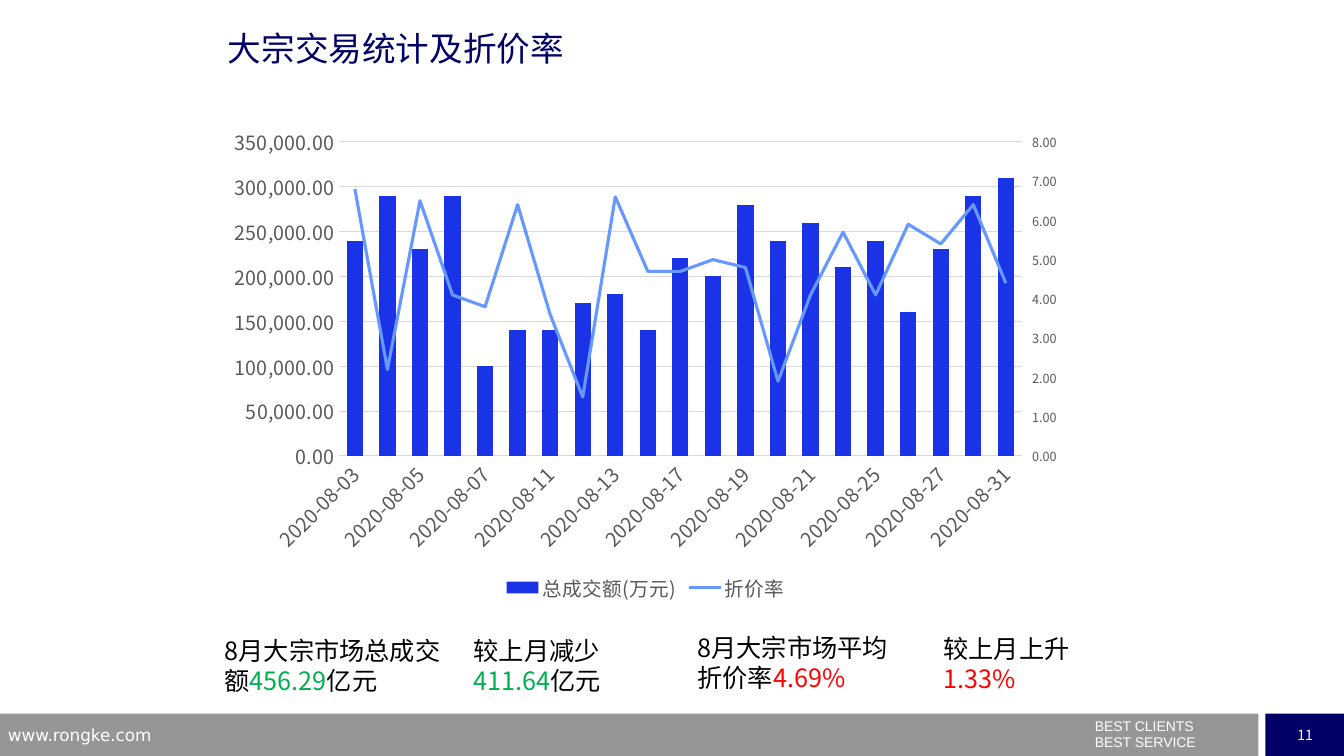
from dataclasses import dataclass

from pptx import Presentation
from pptx import util as u
from pptx.chart.axis import ValueAxis
from pptx.chart.data import CategoryChartData
from pptx.dml.color import RGBColor
from pptx.enum import chart as ch, shapes, text
from pptx.oxml import parse_xml
from pptx.oxml.ns import nsdecls, qn

CJK = "Noto Sans CJK SC"
NAVY, GREY, WHITE, BLACK = "000066", "969696", "FFFFFF", "000000"
GREEN, RED = "00B050", "FF0000"
BAR_BLUE, LINE_BLUE = "1B33E7", "6699FF"
AXIS_GREY, GRID_GREY = "595959", "D9D9D9"

DAYS = [3, 4, 5, 6, 7, 10, 11, 12, 13, 14, 17, 18, 19, 20, 21, 24, 25, 26, 27, 28, 31]
TURNOVER = [240000, 290000, 230000, 290000, 100000, 140000, 140000, 170000, 180000,
            140000, 220000, 200000, 280000, 240000, 260000, 210000, 240000, 160000,
            230000, 290000, 310000]
DISCOUNT = [6.8, 2.2, 6.5, 4.1, 3.8, 6.4, 3.6, 1.5, 6.6, 4.7, 4.7, 5, 4.8, 1.9, 4.1,
            5.7, 4.1, 5.9, 5.4, 6.4, 4.4]


@dataclass
class Box:
    left: float
    top: float
    width: float
    height: float

    def emu(self) -> list:
        return [u.Inches(v) for v in (self.left, self.top, self.width, self.height)]


@dataclass
class Stat:
    box: Box
    paragraphs: list


STATS = [
    Stat(Box(2.13, 6.25, 2.38, 0.71),
         [[("8月大宗市场总成交额", BLACK), ("456.29", GREEN), ("亿元", BLACK)]]),
    Stat(Box(4.6, 6.25, 1.92, 0.71),
         [[("较上月减少", BLACK)], [("411.64", GREEN), ("亿元", BLACK)]]),
    Stat(Box(6.82, 6.22, 2.17, 0.71),
         [[("8月大宗市场平均折价率", BLACK), ("4.69%", RED)]]),
    Stat(Box(9.26, 6.23, 1.65, 0.71),
         [[("较上月上升", BLACK), ("1.33%", RED)]]),
]


def rgb(color: str) -> RGBColor:
    return RGBColor.from_string(color)


def set_font(font, size: float, color: str, name: str = CJK) -> None:
    font.size = u.Pt(size)
    font.name = name
    font.color.rgb = rgb(color)
    font._element.append(parse_xml(f'<a:ea {nsdecls("a")} typeface="{name}"/>'))


def write(tf, paragraphs: list, size: float, name: str = CJK, wrap: bool = True,
          align=text.PP_ALIGN.LEFT, anchor=text.MSO_ANCHOR.TOP,
          auto_size=text.MSO_AUTO_SIZE.NONE, line_spacing: float | None = None,
          space_before: float = 0) -> None:
    tf.word_wrap = wrap
    tf.auto_size = auto_size
    tf.vertical_anchor = anchor
    for i, runs in enumerate(paragraphs):
        p = tf.add_paragraph() if i else tf.paragraphs[0]
        p.alignment = align
        if line_spacing:
            p.line_spacing = line_spacing
        if i and space_before:
            p.space_before = u.Pt(space_before)
        for content, color in runs:
            r = p.add_run()
            r.text = content
            set_font(r.font, size, color, name)


def add_bar(s, box: Box, color: str):
    sp = s.shapes.add_shape(shapes.MSO_SHAPE.RECTANGLE, *box.emu())
    sp.shadow.inherit = False
    sp.fill.solid()
    sp.fill.fore_color.rgb = rgb(color)
    sp.line.fill.background()
    return sp


def add_text(s, box: Box, paragraphs: list, size: float, **fmt) -> None:
    write(s.shapes.add_textbox(*box.emu()).text_frame, paragraphs, size, **fmt)


def style_axis(axis, size: float, tick=ch.XL_TICK_MARK.NONE) -> None:
    axis.major_tick_mark = tick
    axis.minor_tick_mark = ch.XL_TICK_MARK.NONE
    set_font(axis.tick_labels.font, size, AXIS_GREY)


def scale_axis(axis, top: float, step: float) -> None:
    axis.minimum_scale, axis.maximum_scale, axis.major_unit = 0, top, step
    axis.format.line.fill.background()
    axis.tick_labels.number_format = "#,##0.00"
    axis.tick_labels.number_format_is_linked = False


def move_to_right_axis(chart) -> ValueAxis:
    bars = chart._chartSpace.find(".//" + qn("c:barChart"))
    ser = bars.findall(qn("c:ser"))[1]
    for flag in ser.findall(qn("c:invertIfNegative")):
        ser.remove(flag)
    lines = parse_xml(
        f'<c:lineChart {nsdecls("c")}><c:grouping val="standard"/><c:varyColors val="0"/>'
        '<c:marker val="1"/><c:axId val="5001"/><c:axId val="5002"/></c:lineChart>')
    lines.insert(2, ser)
    bars.addnext(lines)
    cat_ax = parse_xml(
        f'<c:catAx {nsdecls("c")}><c:axId val="5001"/>'
        '<c:scaling><c:orientation val="minMax"/></c:scaling><c:delete val="1"/>'
        '<c:axPos val="b"/><c:crossAx val="5002"/><c:crosses val="autoZero"/></c:catAx>')
    val_ax = parse_xml(
        f'<c:valAx {nsdecls("c")}><c:axId val="5002"/>'
        '<c:scaling><c:orientation val="minMax"/></c:scaling><c:delete val="0"/>'
        '<c:axPos val="r"/><c:tickLblPos val="nextTo"/>'
        '<c:crossAx val="5001"/><c:crosses val="max"/></c:valAx>')
    chart.value_axis._element.addnext(cat_ax)
    cat_ax.addnext(val_ax)
    return ValueAxis(val_ax)


def add_turnover_chart(s, box: Box) -> None:
    data = CategoryChartData()
    data.categories = [f"2020-08-{day:02d}" for day in DAYS]
    data.add_series("总成交额(万元)", TURNOVER, "#,##0.00")
    data.add_series("折价率", DISCOUNT, "0.00")
    chart = s.shapes.add_chart(ch.XL_CHART_TYPE.COLUMN_CLUSTERED, *box.emu(), data).chart
    set_font(chart.font, 10, BLACK)
    chart.has_title = False
    chart.has_legend = True
    chart.legend.position = ch.XL_LEGEND_POSITION.BOTTOM
    chart.legend.include_in_layout = False
    set_font(chart.legend.font, 14, AXIS_GREY)

    days, amounts = chart.category_axis, chart.value_axis
    style_axis(days, 14)
    days.format.line.color.rgb = rgb(GRID_GREY)
    days.format.line.width = u.Pt(0.75)
    days._element.find(qn("c:txPr")).find(qn("a:bodyPr")).set("rot", "-2700000")
    style_axis(amounts, 14)
    scale_axis(amounts, 350000, 50000)
    grid = amounts.major_gridlines.format.line
    grid.color.rgb = rgb(GRID_GREY)
    grid.width = u.Pt(0.75)

    rates = move_to_right_axis(chart)
    style_axis(rates, 9, ch.XL_TICK_MARK.OUTSIDE)
    scale_axis(rates, 8, 1)

    bars, lines = chart.plots
    bars.vary_by_categories = False
    bars.gap_width, bars.overlap = 100, -27
    turnover = bars.series[0]
    turnover.invert_if_negative = False
    turnover.format.fill.solid()
    turnover.format.fill.fore_color.rgb = rgb(BAR_BLUE)
    discount = lines.series[0]
    discount.smooth = False
    discount.marker.style = ch.XL_MARKER_STYLE.NONE
    discount.format.line.color.rgb = rgb(LINE_BLUE)
    discount.format.line.width = u.Pt(2.25)


def main() -> None:
    prs = Presentation()
    prs.slide_width, prs.slide_height = u.Inches(13.33), u.Inches(7.5)
    s = prs.slides.add_slide(prs.slide_layouts[5])

    add_bar(s, Box(0, 7.08, 12.48, 0.42), GREY)
    page = add_bar(s, Box(12.55, 7.08, 0.79, 0.42), NAVY)
    write(page.text_frame, [[("11", WHITE)]], 10, wrap=False,
          align=text.PP_ALIGN.CENTER, anchor=text.MSO_ANCHOR.MIDDLE)
    add_text(s, Box(10.76, 7.14, 2.56, 0.36),
             [[("BEST CLIENTS", WHITE)], [("BEST SERVICE", WHITE)]], 10,
             name="Arial", line_spacing=0.5, space_before=5.75)
    add_text(s, Box(-0.02, 7.14, 3.22, 0.26), [[("www.rongke.com", WHITE)]], 12,
             name="DejaVu Sans")

    title = s.shapes.title
    title.left, title.top, title.width, title.height = Box(2.16, 0.23, 9, 1.25).emu()
    write(title.text_frame, [[("大宗交易统计及折价率", NAVY)]], 24)

    for stat in STATS:
        add_text(s, stat.box, stat.paragraphs, 18,
                 auto_size=text.MSO_AUTO_SIZE.SHAPE_TO_FIT_TEXT)
    add_turnover_chart(s, Box(2.16, 1.17, 8.49, 4.84))
    prs.save("out.pptx")


if __name__ == "__main__":
    main()
